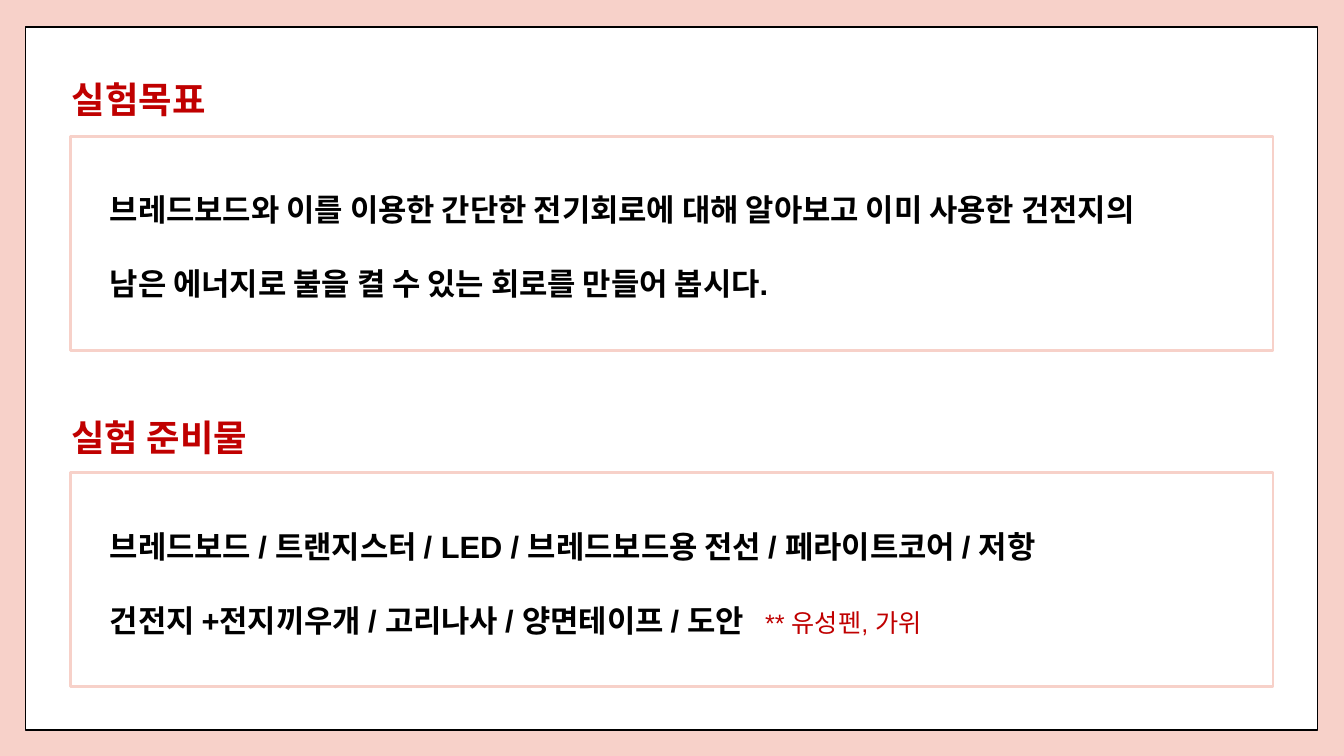
from lxml import etree
from pptx import Presentation
from pptx.dml.color import RGBColor
from pptx.enum.shapes import MSO_SHAPE
from pptx.enum.text import MSO_ANCHOR, MSO_AUTO_SIZE, PP_ALIGN
from pptx.oxml.ns import qn
from pptx.util import Pt

RECTANGLE = MSO_SHAPE.RECTANGLE
TOP = MSO_ANCHOR.TOP
NO_AUTOFIT = MSO_AUTO_SIZE.NONE
LEFT = PP_ALIGN.LEFT
TWO_CONTENT_LAYOUT = 3

COLORS = {"pink": "F7D1C9", "white": "FFFFFF", "black": "000000", "red": "C00000"}
HEADING = {"font": "Cabin", "size": 26, "color": "red", "bold": True}
BODY = {"font": "Arial", "size": 22, "color": "black", "bold": True}
NOTE = {"font": "Arial", "size": 18, "color": "red", "bold": False}

SECTION_TOP = 48
SECTION_STEP = 240
NOTE_TAB = 536

GOAL_LINES = [
    [("브레드보드와 이를 이용한 간단한 전기회로에 대해 알아보고 이미 사용한 건전지의", BODY)],
    [("남은 에너지로 불을 켤 수 있는 회로를 만들어 봅시다.", BODY)],
]
MATERIAL_LINES = [
    [("브레드보드 / 트랜지스터 / LED / 브레드보드용 전선 / 페라이트코어 / 저항", BODY)],
    [("건전지 +전지끼우개 / 고리나사 / 양면테이프 / 도안\t", BODY), ("** 유성펜, 가위", NOTE)],
]


class SlideBuilder:
    def __init__(self, slide):
        self.slide = slide

    def color(self, name):
        return RGBColor.from_string(COLORS[name])

    def background(self, color):
        fill = self.slide.background.fill
        fill.solid()
        fill.fore_color.rgb = self.color(color)

    def frame(self, left, top, width, height, line, weight):
        shape = self.slide.shapes.add_shape(RECTANGLE, Pt(left), Pt(top), Pt(width), Pt(height))
        shape.shadow.inherit = False
        shape.fill.solid()
        shape.fill.fore_color.rgb = self.color("white")
        shape.line.color.rgb = self.color(line)
        shape.line.width = Pt(weight)

    def text_box(self):
        return self.slide.shapes.add_textbox(0, 0, 0, 0)

    def place(self, shape, left, top, width, height, inset):
        """Position a text shape, bring it to the front and return its text frame."""
        shape.left, shape.top, shape.width, shape.height = Pt(left), Pt(top), Pt(width), Pt(height)
        shape.element.getparent().append(shape.element)
        text_frame = shape.text_frame
        text_frame.word_wrap = True
        text_frame.auto_size = NO_AUTOFIT
        text_frame.vertical_anchor = TOP
        text_frame.margin_left = text_frame.margin_right = Pt(7.2)
        text_frame.margin_top = text_frame.margin_bottom = Pt(inset)
        return text_frame

    def add_run(self, paragraph, text, style):
        run = paragraph.add_run()
        run.text = text
        run.font.name = style["font"]
        run.font.size = Pt(style["size"])
        run.font.bold = style["bold"]
        run.font.color.rgb = self.color(style["color"])

    def heading(self, shape, top, text):
        text_frame = self.place(shape, 44, top, 310, 34.5, 7.2)
        paragraph = text_frame.paragraphs[0]
        paragraph.alignment = LEFT
        self.add_run(paragraph, text, HEADING)

    def body(self, shape, top, lines):
        text_frame = self.place(shape, 71.3, top, 840, 114, 3.6)
        for index, runs in enumerate(lines):
            paragraph = text_frame.add_paragraph() if index else text_frame.paragraphs[0]
            paragraph.alignment = LEFT
            paragraph.line_spacing = 2.0
            paragraph.space_before = Pt(0)
            self.plain_paragraph(paragraph)
            for text, style in runs:
                self.add_run(paragraph, text, style)

    def plain_paragraph(self, paragraph):
        """Remove the bullet and indent, and set the tab stop for the note."""
        properties = paragraph._p.get_or_add_pPr()
        properties.set("marL", "0")
        properties.set("indent", "0")
        etree.SubElement(properties, qn("a:buNone"))
        tabs = etree.SubElement(properties, qn("a:tabLst"))
        etree.SubElement(tabs, qn("a:tab"), pos=str(Pt(NOTE_TAB)), algn="l")


def main():
    presentation = Presentation()
    presentation.slide_width, presentation.slide_height = Pt(960), Pt(540)
    slide = presentation.slides.add_slide(presentation.slide_layouts[TWO_CONTENT_LAYOUT])
    builder = SlideBuilder(slide)
    title, goal, materials = list(slide.placeholders)[:3]

    builder.background("pink")
    builder.frame(18, 19.4, 923, 502, "black", 1)
    sections = [
        (title, "실험목표", goal, GOAL_LINES, 58),
        (builder.text_box(), "실험 준비물", materials, MATERIAL_LINES, 58),
    ]
    for index, (heading, heading_text, body, lines, body_offset) in enumerate(sections):
        top = SECTION_TOP + index * SECTION_STEP
        builder.frame(50.4, top + 49.5, 859, 152.8, "pink", 2)
        builder.heading(heading, top + index, heading_text)
        builder.body(body, top + body_offset + index, lines)
    presentation.save("out.pptx")


if __name__ == "__main__":
    main()
